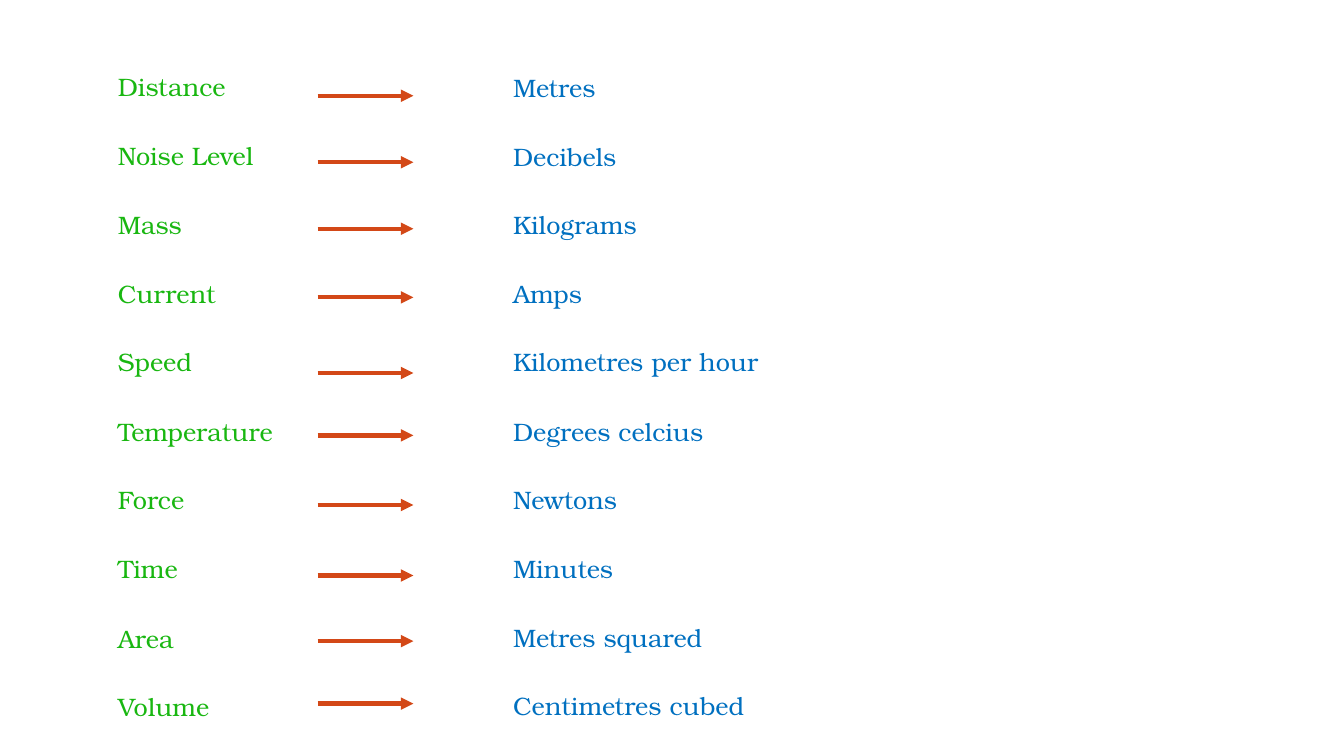
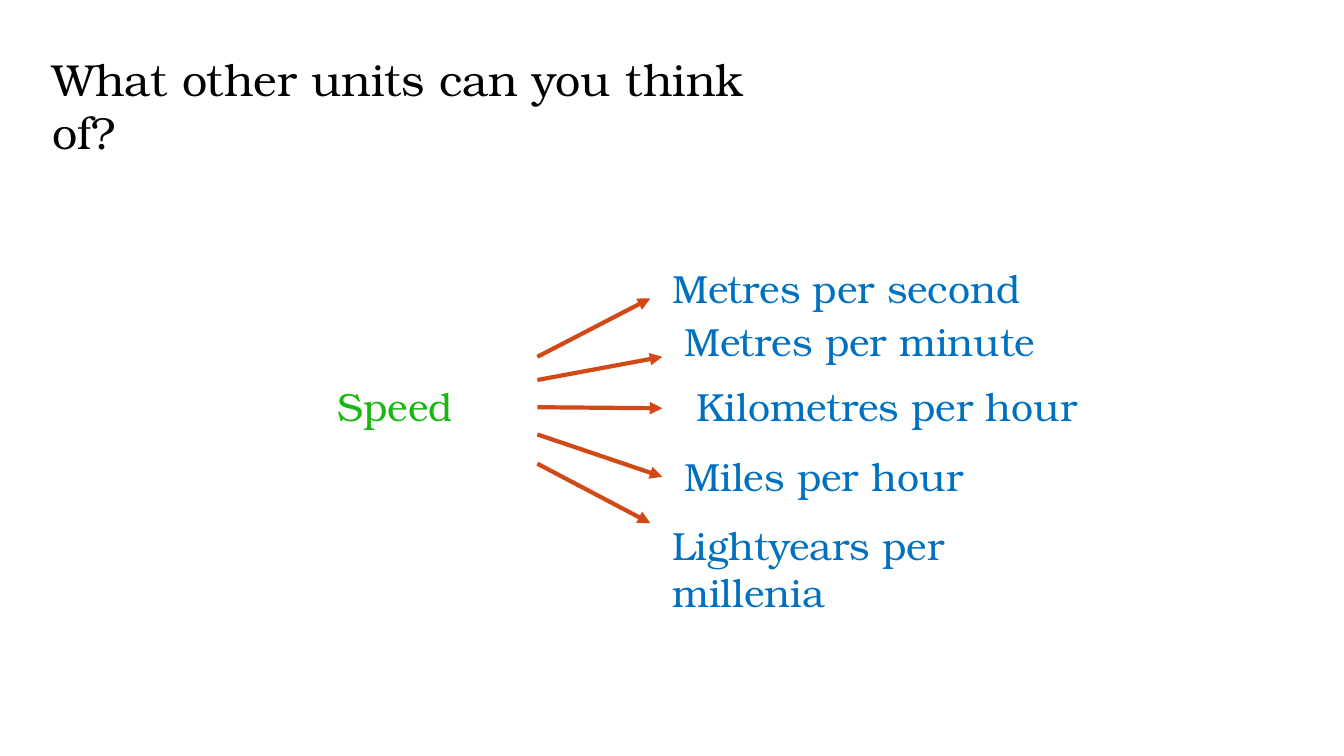
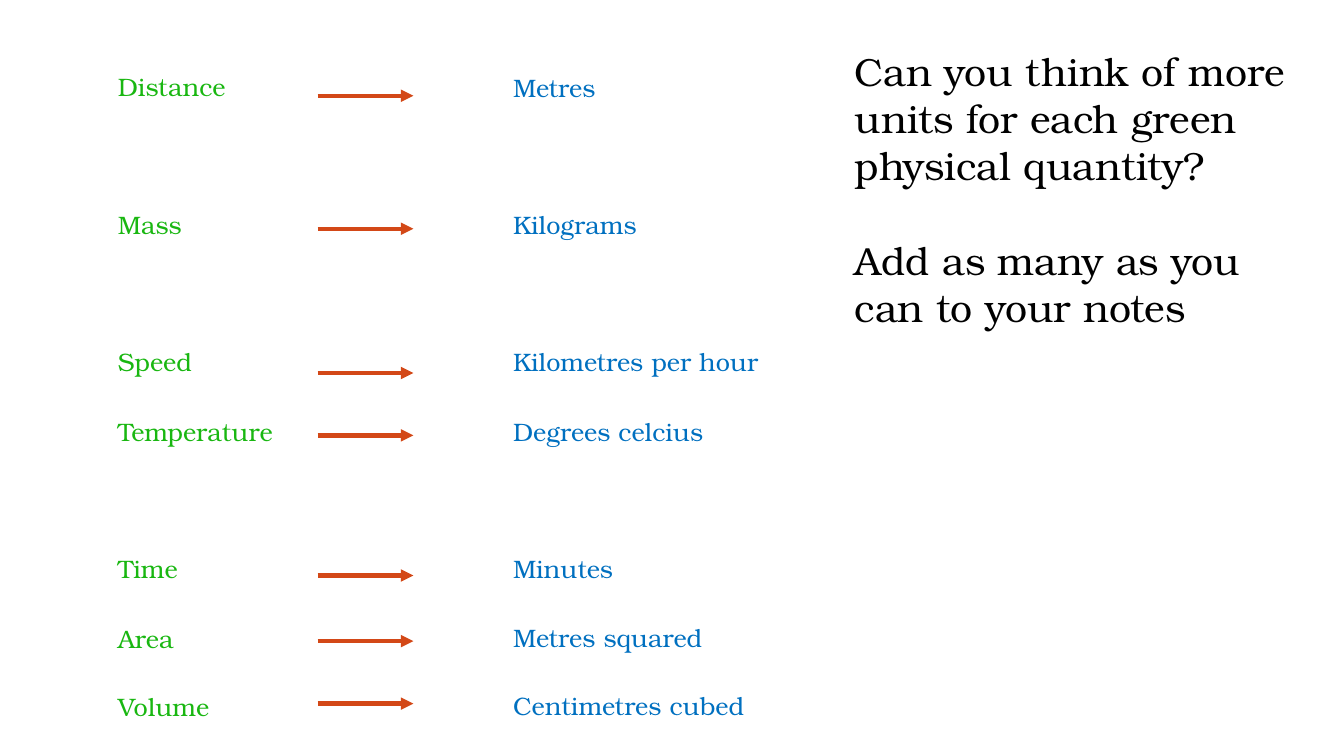
from lxml import etree
from pptx import Presentation
from pptx.dml.color import RGBColor
from pptx.enum.shapes import MSO_CONNECTOR
from pptx.enum.text import MSO_AUTO_SIZE
from pptx.oxml.ns import qn
from pptx.util import Emu, Pt

STRAIGHT = MSO_CONNECTOR.STRAIGHT
GROW = MSO_AUTO_SIZE.SHAPE_TO_FIT_TEXT

# Shared style
PX = 9144  # 100 px to the inch
FONT = "TeX Gyre Bonum"
GREEN = RGBColor(0x19, 0xB7, 0x11)
BLUE = RGBColor(0x00, 0x70, 0xC0)
BLACK = RGBColor(0x00, 0x00, 0x00)
ORANGE = RGBColor(0xD3, 0x48, 0x17)
LIST_SIZE, BIG_SIZE, TITLE_SIZE = 18, 28, 32

# Quantity, unit, height of the arrow between them
PAIRS = [
    ("Distance", "Metres", 95),
    ("Noise Level", "Decibels", 161),
    ("Mass", "Kilograms", 227),
    ("Current", "Amps", 295),
    ("Speed", "Kilometres per hour", 370),
    ("Temperature", "Degrees celcius", 432),
    ("Force", "Newtons", 501),
    ("Time", "Minutes", 571),
    ("Area", "Metres squared", 636),
    ("Volume", "Centimetres cubed", 698),
]
SINGLE_UNIT = {"Noise Level", "Current", "Force"}
QUANTITY_TOP, UNIT_TOP = (66, 681), (67, 680)  # first and last row

# Unit, its left, top and width, then the arrow's start y and end
SPEED_UNITS = [
    ("Metres per second", 657, 257, 428, 354, (645, 296)),
    ("Metres per minute", 669, 310, 428, 377, (657, 354)),
    ("Kilometres per hour", 681, 374, 428, 404, (657, 405)),
    ("Miles per hour", 669, 444, 428, 431, (657, 473)),
    ("Lightyears per millenia", 657, 512, 453, 460, (645, 519)),
]
TITLE = "What other units can you think of?"
TASK = [
    "Can you think of more units for each green physical quantity?",
    "Add as many as you can to your notes",
]


def px(*lengths):
    return [Emu(round(n) * PX) for n in lengths]


def add_text(s, paragraphs, box, size, color, gap=0):
    sp = s.shapes.add_textbox(*px(*box))
    tf = sp.text_frame
    tf.word_wrap = True
    tf.auto_size = GROW
    for i, text in enumerate(paragraphs):
        p = tf.add_paragraph() if i else tf.paragraphs[0]
        if i:
            p.space_before = Pt(gap)
        r = p.add_run()
        r.text = text
        r.font.name = FONT
        r.font.size = Pt(size)
        r.font.color.rgb = color


def add_arrow(s, start, end):
    line = s.shapes.add_connector(STRAIGHT, *px(*start, *end))
    line.line.color.rgb = ORANGE
    line.line.width = Pt(3)
    ln = line.line._get_or_add_ln()
    etree.SubElement(ln, qn("a:tailEnd"), type="triangle")
    etree.SubElement(line._element.spPr, qn("a:effectLst"))


def add_pairs(s, hidden=()):
    def row_top(span, i):
        return span[0] + (span[1] - span[0]) * i / (len(PAIRS) - 1)

    for i, (quantity, unit, y) in enumerate(PAIRS):
        if quantity in hidden:
            continue
        add_text(s, [quantity], (107, row_top(QUANTITY_TOP, i), 208, 40), LIST_SIZE, GREEN)
        add_text(s, [unit], (499, row_top(UNIT_TOP, i), 323, 40), LIST_SIZE, BLUE)
        add_arrow(s, (315, y), (410, y))


def main():
    prs = Presentation()
    prs.slide_width, prs.slide_height = px(1333, 750)
    blank = prs.slide_layouts[6]

    # Every quantity with its unit
    add_pairs(prs.slides.add_slide(blank))

    # Several units for speed
    s = prs.slides.add_slide(blank)
    add_text(s, [TITLE], (42, 46, 760, 64), TITLE_SIZE, BLACK)
    add_text(s, ["Speed"], (325, 374, 167, 57), BIG_SIZE, GREEN)
    for unit, left, top, width, start_y, end in SPEED_UNITS:
        add_text(s, [unit], (left, top, width, 57), BIG_SIZE, BLUE)
        add_arrow(s, (533, start_y), end)

    # Quantities that have more units, with the task
    s = prs.slides.add_slide(blank)
    add_pairs(s, SINGLE_UNIT)
    add_text(s, TASK, (838, 42, 470, 293), BIG_SIZE, BLACK, gap=34)

    prs.save("out.pptx")


if __name__ == "__main__":
    main()
